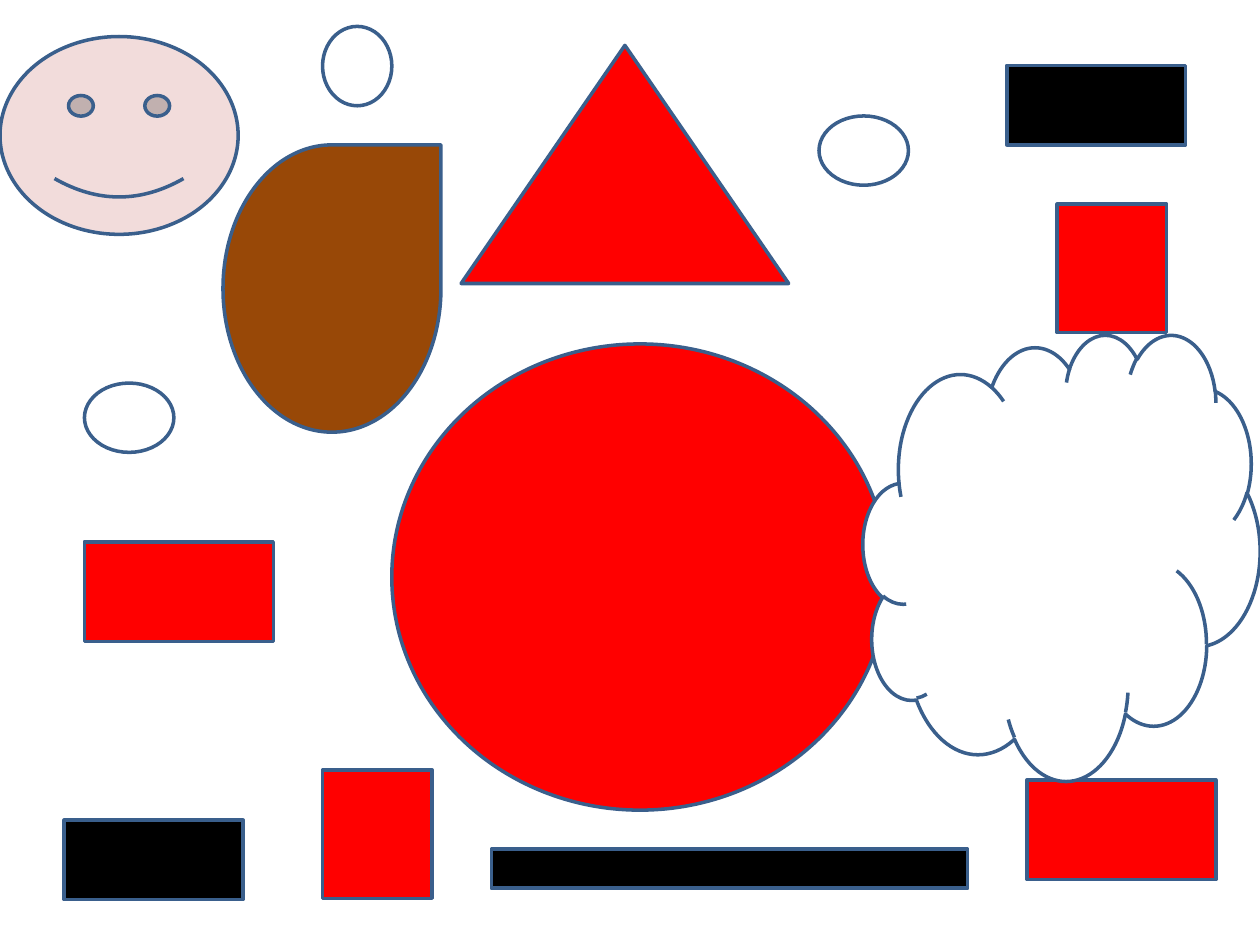
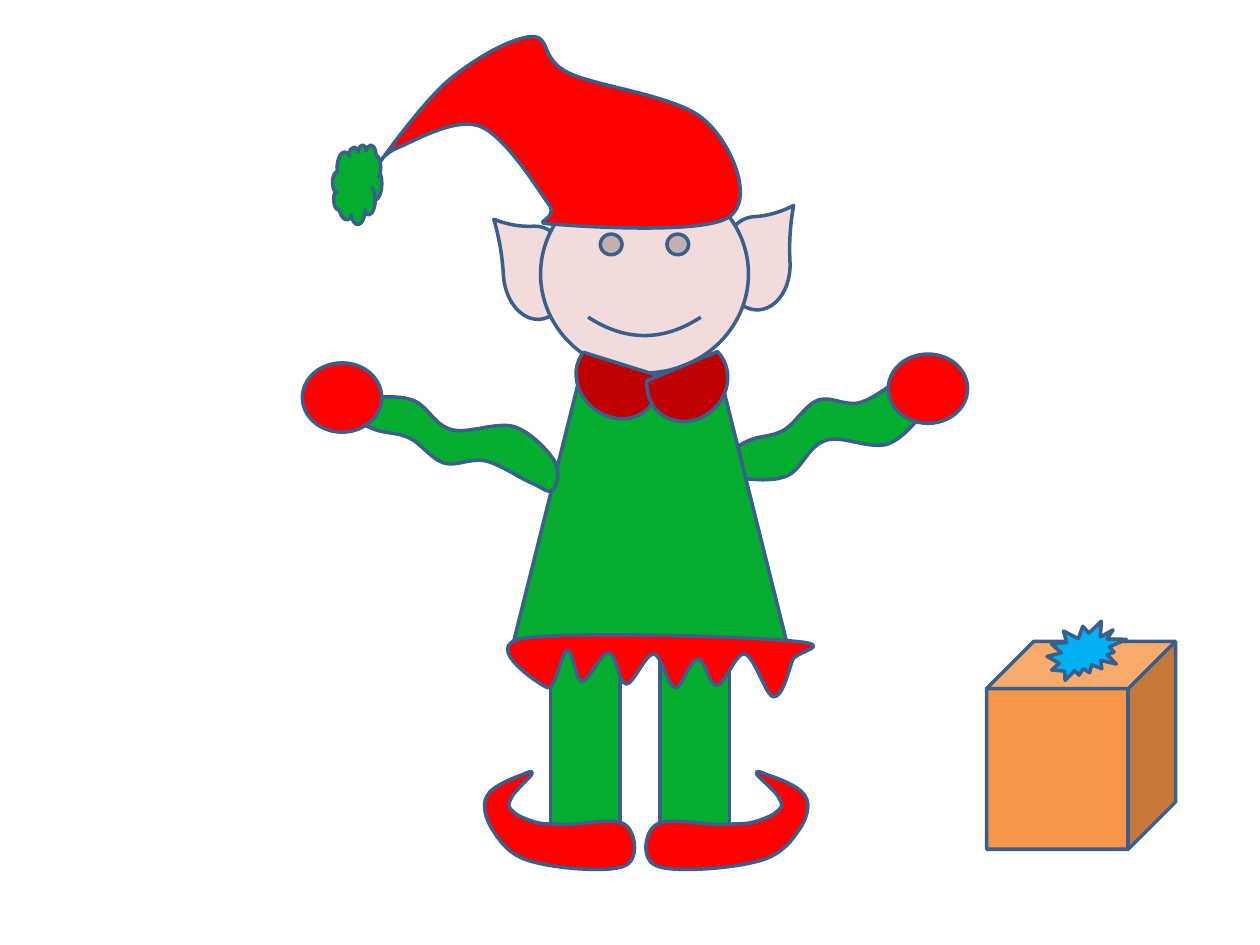
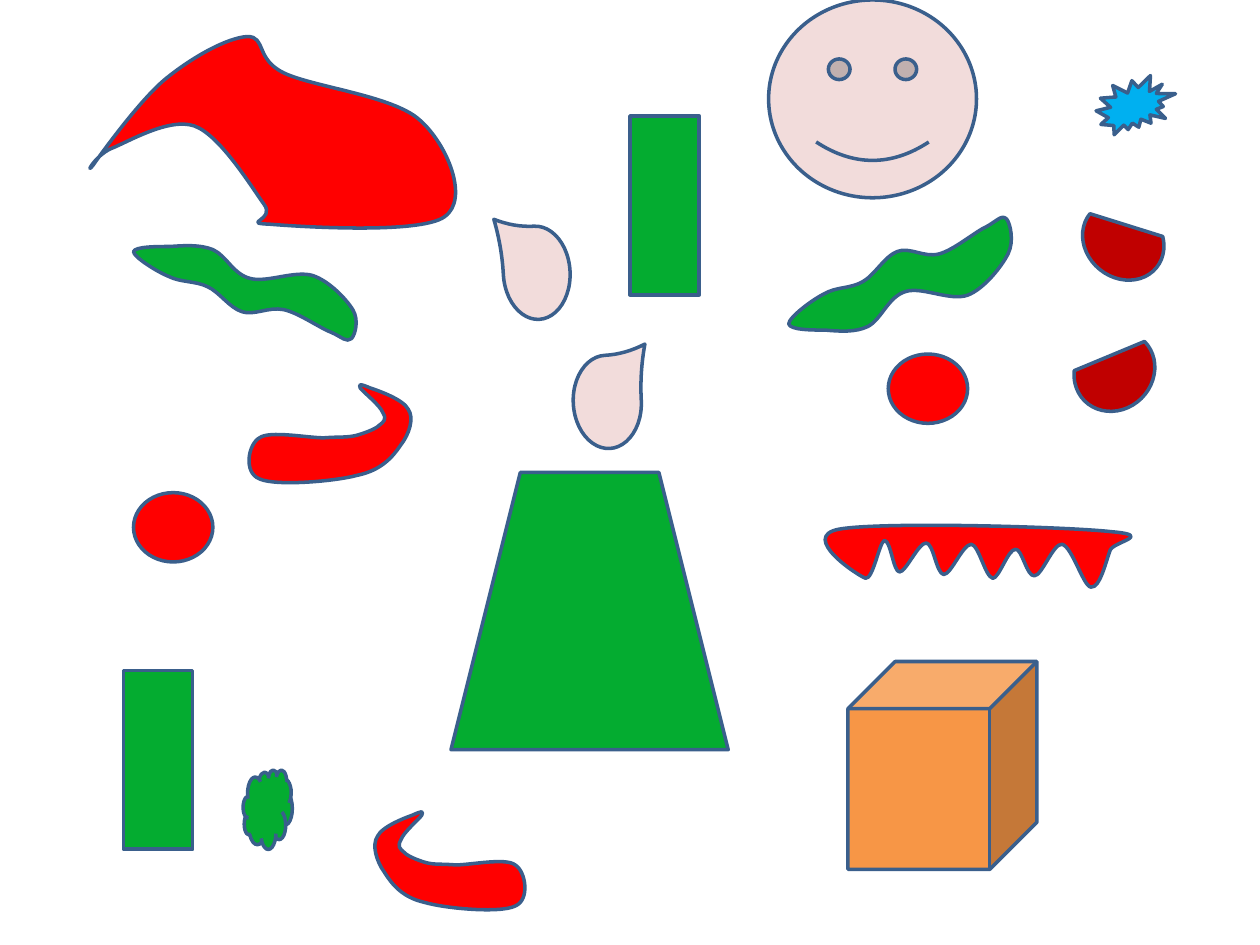
from dataclasses import dataclass

from pptx import Presentation
from pptx.dml.color import RGBColor
from pptx.enum.shapes import MSO_SHAPE
from pptx.oxml.ns import qn
from pptx.util import Emu, Inches, Pt

RECT, OVAL, TRIANGLE = MSO_SHAPE.RECTANGLE, MSO_SHAPE.OVAL, MSO_SHAPE.ISOSCELES_TRIANGLE
TEAR, CLOUD, SMILEY = MSO_SHAPE.TEAR, MSO_SHAPE.CLOUD, MSO_SHAPE.SMILEY_FACE
TRAPEZOID, CHORD = MSO_SHAPE.TRAPEZOID, MSO_SHAPE.CHORD
CUBE, BURST = MSO_SHAPE.CUBE, MSO_SHAPE.EXPLOSION2

# The slide is a grid of 1000 columns by 750 rows
COLS, ROWS = 1000, 750
UNIT = Inches(10) // COLS


@dataclass(frozen=True)
class Theme:
    outline: str = "3A5F8C"
    outline_width: float = 2
    red: str = "FF0000"
    dark_red: str = "C00000"
    green: str = "04AC30"
    skin: str = "F2DCDB"
    brown: str = "984807"
    orange: str = "F79646"
    blue: str = "00B0F0"
    black: str = "000000"
    white: str = "FFFFFF"


T = Theme()

# Curved outlines: a start point, then two handles and an end point per row
ARM = [
    (174, 32),
    (169, 42), (155, 60), (142, 65),
    (128, 70), (106, 58), (93, 62),
    (79, 66), (74, 84), (63, 90),
    (53, 95), (40, 94), (29, 93),
    (19, 93), (1, 93), (0, 88),
    (0, 83), (18, 69), (28, 64),
    (38, 58), (49, 60), (59, 54),
    (68, 49), (76, 34), (86, 30),
    (96, 26), (107, 35), (119, 32),
    (131, 29), (148, 14), (157, 10),
    (166, 5), (169, 0), (173, 4),
    (176, 8), (179, 22), (174, 32),
]
HAT = [
    (285, 143),
    (305, 129), (287, 85), (265, 66),
    (244, 47), (181, 40), (158, 29),
    (135, 18), (144, 0), (129, 0),
    (113, 1), (86, 16), (65, 33),
    (45, 49), (14, 92), (7, 102),
    (0, 111), (8, 95), (21, 89),
    (34, 84), (67, 64), (87, 71),
    (107, 78), (132, 119), (142, 133),
    (152, 146), (123, 148), (147, 149),
    (171, 151), (266, 157), (285, 143),
]
SHOE = [
    (64, 44),
    (51, 44), (21, 38), (13, 44),
    (4, 49), (0, 72), (13, 77),
    (26, 83), (73, 79), (91, 74),
    (110, 70), (119, 59), (125, 50),
    (132, 41), (136, 28), (131, 21),
    (127, 13), (107, 6), (101, 4),
    (94, 1), (91, 0), (93, 4),
    (95, 7), (109, 18), (111, 24),
    (114, 29), (112, 31), (108, 34),
    (105, 37), (97, 40), (90, 42),
    (82, 44), (77, 43), (64, 44),
]
HEM = [
    (32, 6),
    (0, 12), (47, 43), (53, 45),
    (59, 46), (64, 16), (68, 15),
    (73, 15), (75, 40), (80, 40),
    (85, 40), (95, 17), (101, 17),
    (107, 17), (109, 41), (115, 42),
    (121, 42), (130, 18), (137, 18),
    (143, 19), (148, 44), (154, 45),
    (159, 45), (166, 22), (172, 22),
    (177, 21), (181, 44), (187, 43),
    (193, 43), (202, 17), (209, 18),
    (217, 20), (226, 52), (232, 52),
    (239, 53), (244, 31), (247, 23),
    (249, 16), (283, 11), (248, 8),
    (212, 4), (65, 0), (32, 6),
]

# Each part: preset or outline, columns, rows, fill, format values
PARTS = {
    # Plain shapes
    "triangle": (TRIANGLE, 260, 189, T.red, {}),
    "tall oval": (OVAL, 55, 63, T.white, {}),
    "wide oval": (OVAL, 71, 55, T.white, {}),
    "wide block": (RECT, 150, 79, T.red, {}),
    "tall block": (RECT, 87, 102, T.red, {}),
    "black block": (RECT, 142, 63, T.black, {}),
    "black bar": (RECT, 378, 31, T.black, {}),
    "drop": (TEAR, 173, 228, T.brown, {}),
    "disc": (OVAL, 394, 370, T.red, {}),
    "big cloud": (CLOUD, 315, 354, T.white, {}),
    "wide face": (SMILEY, 189, 157, T.skin, {}),
    # Elf
    "right arm": (ARM, 179, 94, T.green, {}),
    "left arm": (ARM, 179, 78, T.green, {"flip": "V"}),
    "right ear": (TEAR, 74, 54, T.skin, {"rotation": 266.9, "flip": "V", "adj": 1.195}),
    "left ear": (TEAR, 74, 53, T.skin, {"rotation": 266.9, "adj": 1.195}),
    "face": (SMILEY, 165, 157, T.skin, {}),
    "tunic": (TRAPEZOID, 220, 220, T.green, {}),
    "leg": (RECT, 55, 142, T.green, {}),
    "left collar": (CHORD, 59, 68, T.dark_red, {"rotation": 309}),
    "right collar": (CHORD, 61, 67, T.dark_red, {"rotation": 45.5, "flip": "H"}),
    "hat": (HAT, 306, 157, T.red, {}),
    "pompom": (CLOUD, 39, 63, T.green, {}),
    "hand": (OVAL, 63, 55, T.red, {}),
    "right shoe": (SHOE, 136, 82, T.red, {}),
    "left shoe": (SHOE, 126, 82, T.red, {"flip": "H"}),
    "hem": (HEM, 283, 53, T.red, {}),
    # Present
    "box": (CUBE, 150, 165, T.orange, {}),
    "bow": (BURST, 63, 47, T.blue, {}),
}


def add_outline(s, points, x, y, w, h, flip):
    """Fit a curved outline to the given size, mirrored if asked."""
    full_w, full_h = (max(axis) for axis in zip(*points))
    fitted = []
    for px, py in points:
        px = full_w - px if flip == "H" else px
        py = full_h - py if flip == "V" else py
        fitted.append((round((x + px * w / full_w) * UNIT),
                       round((y + py * h / full_h) * UNIT)))
    builder = s.shapes.build_freeform(*fitted[0])
    builder.add_line_segments(fitted[1:], close=True)
    sp = builder.convert_to_shape()

    # Join every three line points into one Bezier curve
    lines = list(sp._element.iter(qn("a:lnTo")))
    for first, *others in zip(lines[::3], lines[1::3], lines[2::3]):
        first.tag = qn("a:cubicBezTo")
        for line in others:
            first.append(line[0])
            line.getparent().remove(line)
    return sp


def add_part(s, name, x, y):
    kind, w, h, fill, fmt = PARTS[name]
    flip = fmt.get("flip")
    if isinstance(kind, list):
        sp = add_outline(s, kind, x, y, w, h, flip)
    else:
        sp = s.shapes.add_shape(kind, *(Emu(v * UNIT) for v in (x, y, w, h)))
        if flip:
            sp._element.spPr.xfrm.set("flip" + flip, "1")
        if "adj" in fmt:
            sp.adjustments[0] = fmt["adj"]
        sp.rotation = fmt.get("rotation", 0)
    sp.shadow.inherit = False
    sp.fill.solid()
    sp.fill.fore_color.rgb = RGBColor.from_string(fill)
    sp.line.color.rgb = RGBColor.from_string(T.outline)
    sp.line.width = Pt(T.outline_width)


def place(s, box, layout):
    """Place named parts, back to front, from the box's top left corner."""
    left, top = box
    for name, x, y in layout:
        add_part(s, name, left + x, top + y)


def plain_shapes(s, box):
    place(s, box, [
        ("triangle", 366, 36),
        ("tall oval", 256, 21),
        ("wide block", 815, 619),
        ("wide block", 67, 430),
        ("wide oval", 650, 92),
        ("wide oval", 67, 304),
        ("tall block", 256, 611),
        ("tall block", 839, 162),
        ("black block", 51, 651),
        ("black block", 799, 52),
        ("drop", 177, 115),
        ("disc", 311, 273),
        ("big cloud", 685, 265),
        ("wide face", 0, 29),
        ("black bar", 390, 674),
    ])


def elf(s, box):
    place(s, box, [
        ("right arm", 323, 259),
        ("right ear", 323, 153),
        ("left ear", 149, 161),
        ("face", 189, 110),
        ("tunic", 166, 267),
        ("leg", 197, 488),
        ("leg", 284, 488),
        ("left collar", 220, 238),
        ("right collar", 275, 240),
        ("hat", 53, 0),
        ("pompom", 24, 86),
        ("left arm", 26, 285),
        ("hand", 0, 259),
        ("hand", 465, 252),
        ("right shoe", 268, 582),
        ("left shoe", 142, 582),
        ("hem", 142, 472),
    ])


def present(s, box):
    place(s, box, [("box", 0, 16), ("bow", 48, 0)])


def loose_parts(s, box):
    place(s, box, [
        ("right arm", 626, 170),
        ("right ear", 445, 292),
        ("left ear", 389, 190),
        ("face", 610, 0),
        ("tunic", 358, 375),
        ("leg", 98, 532),
        ("leg", 500, 92),
        ("left collar", 862, 157),
        ("right collar", 854, 261),
        ("hat", 67, 29),
        ("pompom", 193, 611),
        ("left arm", 106, 194),
        ("hand", 106, 391),
        ("hand", 705, 281),
        ("right shoe", 193, 304),
        ("left shoe", 295, 643),
        ("hem", 634, 414),
        ("box", 673, 525),
        ("bow", 870, 60),
    ])


def main():
    prs = Presentation()
    prs.slide_width, prs.slide_height = Emu(COLS * UNIT), Emu(ROWS * UNIT)
    # Regions of each slide with their top left corners
    slides = [
        [(plain_shapes, (0, 0))],
        [(elf, (240, 29)), (present, (783, 493))],
        [(loose_parts, (0, 0))],
    ]
    for regions in slides:
        s = prs.slides.add_slide(prs.slide_layouts[6])
        for draw, box in regions:
            draw(s, box)
    prs.save("out.pptx")


if __name__ == "__main__":
    main()
